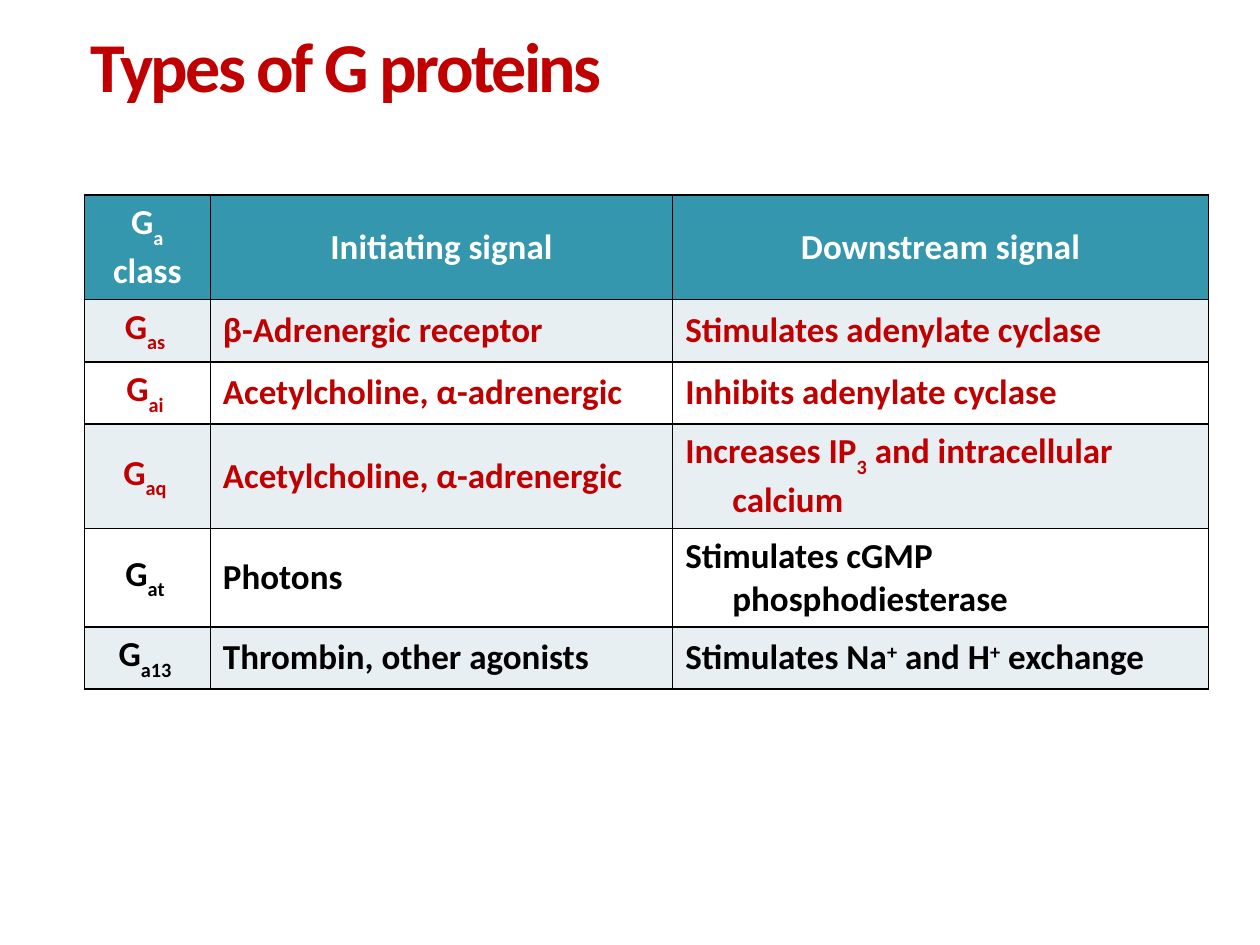
"""Build a slide with a table of G protein types."""
from lxml.etree import SubElement
from pptx import Presentation
from pptx.dml.color import RGBColor
from pptx.enum.text import MSO_ANCHOR, PP_ALIGN
from pptx.oxml.ns import qn
from pptx.util import Cm, Pt

TITLE = "Types of G proteins"
SUB, SUP = -30000, 30000
HEAD = [
    [["G", ("a", SUB)], ["class"]],
    [["Initiating signal"]],
    [["Downstream signal"]],
]
BODY = [
    ("as ", "β-Adrenergic receptor", ["Stimulates adenylate cyclase"]),
    ("ai ", "Acetylcholine, α-adrenergic", ["Inhibits adenylate cyclase"]),
    ("aq ", "Acetylcholine, α-adrenergic",
     ["Increases IP", ("3", SUB), " and intracellular calcium"]),
    ("at ", "Photons", ["Stimulates cGMP phosphodiesterase"]),
    ("a13 ", "Thrombin, other agonists",
     ["Stimulates Na", ("+", SUP), " and H", ("+", SUP), " exchange"]),
]
ROWS = [HEAD] + [[[["G", (tag, SUB)]], [[start]], [end]]
                 for tag, start, end in BODY]
WIDTHS = [2.54, 9.32, 10.8]
HEIGHTS = [2.11, 1.25, 1.25, 2.11, 1.98, 1.25]
RED_ROWS = range(1, 4)
COLORS = {"red": "C00000", "teal": "3497AE", "pale": "E8EFF2",
          "white": "FFFFFF", "black": "000000"}


def add_run(para, text, size, color, base=0):
    run = para.add_run()
    run.text = text
    font = run.font
    font.name, font.size, font.bold = "Calibri", Pt(size), True
    font.color.rgb = RGBColor.from_string(COLORS[color])
    props = run._r.get_or_add_rPr()
    if base:
        props.set("baseline", str(base))
    return props


def add_edges(cell):
    props = cell._tc.get_or_add_tcPr()
    for side in ("lnL", "lnR", "lnT", "lnB"):
        line = SubElement(props, qn(f"a:{side}"), w=str(Pt(1)))
        fill = SubElement(line, qn("a:solidFill"))
        SubElement(fill, qn("a:srgbClr"), val=COLORS["black"])


def fill_cell(cell, paras, ink, back, center):
    add_edges(cell)
    cell.fill.solid()
    cell.fill.fore_color.rgb = RGBColor.from_string(COLORS[back])
    cell.vertical_anchor = MSO_ANCHOR.MIDDLE
    frame = cell.text_frame
    for i, runs in enumerate(paras):
        para = frame.add_paragraph() if i else frame.paragraphs[0]
        para.alignment = PP_ALIGN.CENTER if center else PP_ALIGN.LEFT
        props = para._p.get_or_add_pPr()
        props.set("marL", str(Cm(0.95)))
        props.set("indent", str(-Cm(0.95)))
        for run in runs:
            text, base = (run, 0) if isinstance(run, str) else run
            add_run(para, text, 20, ink, base)


def add_title(slide):
    frame = slide.shapes.add_textbox(
        Cm(1.83), Cm(0.64), Cm(20.19), Cm(1.55)).text_frame
    frame.word_wrap = True
    frame.margin_left = frame.margin_right = 0
    frame.margin_top = frame.margin_bottom = 0
    para = frame.paragraphs[0]
    para.line_spacing = 0.9
    add_run(para, TITLE, 40, "red").set("spc", "-150")


def add_grid(slide):
    table = slide.shapes.add_table(
        len(ROWS), len(WIDTHS), Cm(1.7), Cm(3.93),
        Cm(sum(WIDTHS)), Cm(sum(HEIGHTS))).table
    for col, width in zip(table.columns, WIDTHS):
        col.width = Cm(width)
    for r, (row, height) in enumerate(zip(ROWS, HEIGHTS)):
        table.rows[r].height = Cm(height)
        ink = "white" if r == 0 else "red" if r in RED_ROWS else "black"
        back = "teal" if r == 0 else "pale" if r % 2 else "white"
        for c, paras in enumerate(row):
            fill_cell(table.cell(r, c), paras, ink, back, r == 0 or c == 0)


def main():
    deck = Presentation()
    deck.slide_width, deck.slide_height = Cm(25.4), Cm(19.05)
    slide = deck.slides.add_slide(deck.slide_layouts[6])
    add_title(slide)
    add_grid(slide)
    deck.save("out.pptx")


if __name__ == "__main__":
    main()
